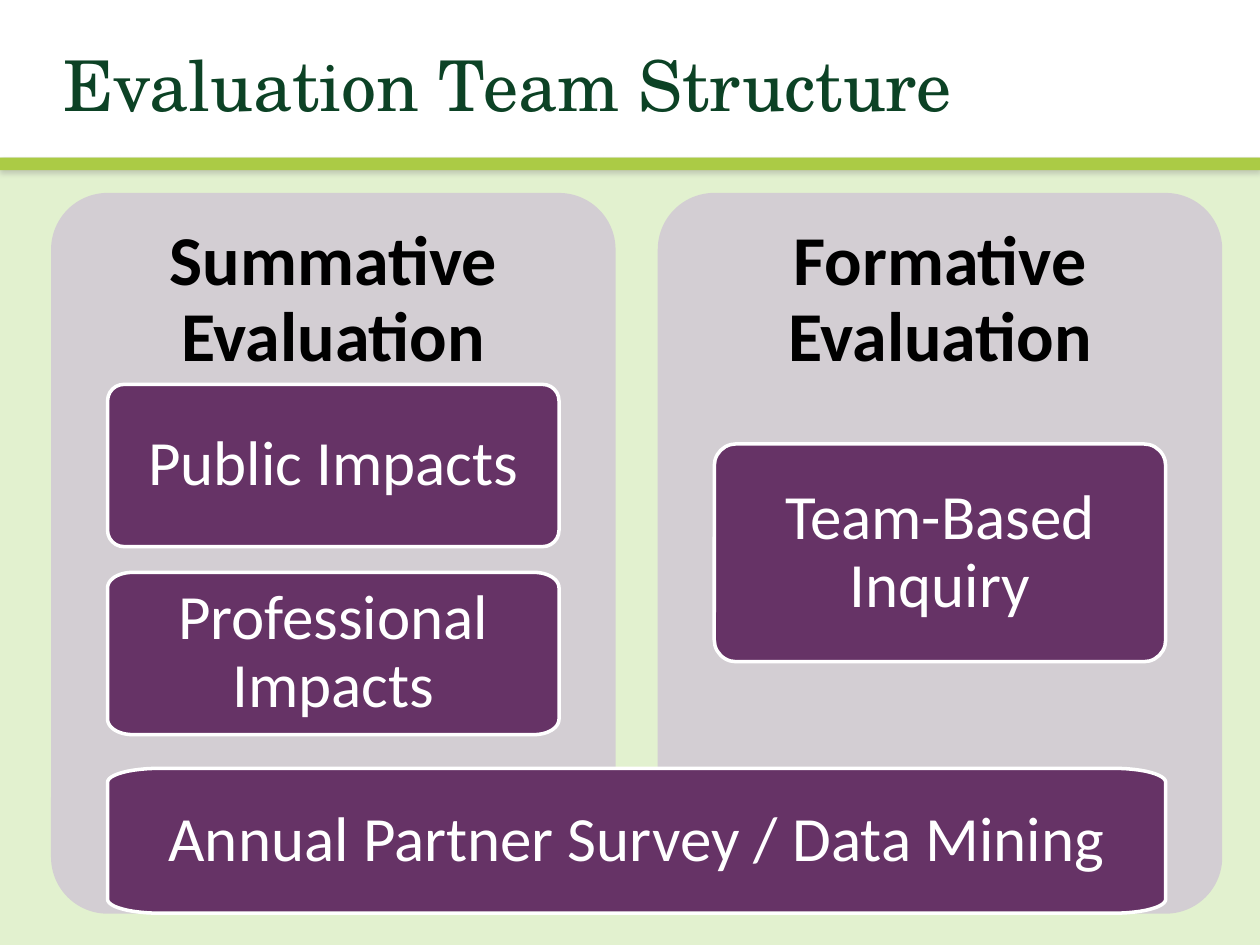
from math import cos, pi, sin

from lxml.etree import SubElement
from pptx import Presentation
from pptx.dml.color import RGBColor
from pptx.enum.shapes import MSO_SHAPE as Shape
from pptx.enum.text import MSO_ANCHOR as Anchor, MSO_AUTO_SIZE as AutoSize, PP_ALIGN as Align
from pptx.oxml.ns import qn
from pptx.util import Cm, Pt

WHITE, BLACK, GREEN, LIME = "FFFFFF", "000000", "0C4225", "ABCB45"
MINT, GREY, PURPLE, SHADE = "E2F1CF", "D3CED3", "663366", "808080"


def color(hex_value):
    return RGBColor.from_string(hex_value)


class SlideStyle:
    heading_font = "TeX Gyre Schola"
    body_font = "Calibri"

    def __init__(self, slide):
        self.shapes = slide.shapes
        slide.background.fill.solid()
        slide.background.fill.fore_color.rgb = color(MINT)

    def paint(self, shape, fill, line=None):
        shape.shadow.inherit = False
        shape.fill.solid()
        shape.fill.fore_color.rgb = color(fill)
        if line:
            shape.line.color.rgb = color(line)
            shape.line.width = Pt(2)
        else:
            shape.line.fill.background()

    def set_text(self, shape, text, insets, align=Align.CENTER, after=0, ink=BLACK, **font):
        frame = shape.text_frame
        frame.text = text
        frame.word_wrap = True
        frame.auto_size = AutoSize.NONE
        frame.vertical_anchor = Anchor.MIDDLE
        for side, inset in zip(("left", "top", "right", "bottom"), insets):
            setattr(frame, f"margin_{side}", Cm(inset))
        paragraph = frame.paragraphs[0]
        layout = {"alignment": align, "line_spacing": 0.9, "space_after": Pt(after)}
        for name, value in layout.items():
            setattr(paragraph, name, value)
        run_font = paragraph.runs[0].font
        run_font.color.rgb = color(ink)
        for name, value in font.items():
            setattr(run_font, name, value)

    def title(self, text, left, top, width, height):
        title = self.shapes.title
        place = {"left": left, "top": top, "width": width, "height": height}
        for name, value in place.items():
            setattr(title, name, Cm(value))
        self.set_text(title, text, (0.25, 0.13, 0.25, 0.13), Align.LEFT,
                      ink=GREEN, name=self.heading_font, size=Pt(40))
        # The title goes in front of the header bands
        title.element.getparent().append(title.element)

    def band(self, top, height, fill):
        band = self.shapes.add_shape(Shape.RECTANGLE, 0, Cm(top), Cm(25.4), Cm(height))
        self.paint(band, fill)
        # Soft shadow straight below the band
        effects = band.element.spPr.find(qn("a:effectLst"))
        shadow = SubElement(effects, qn("a:outerShdw"), blurRad=str(Pt(3.1)),
                            dist=str(Pt(1.8)), dir="5400000", rotWithShape="0")
        tint = SubElement(shadow, qn("a:srgbClr"), val=SHADE)
        SubElement(tint, qn("a:alpha"), val="35000")

    def round_box(self, left, top, width, height, radius):
        box = self.shapes.add_shape(Shape.ROUNDED_RECTANGLE,
                                    Cm(left), Cm(top), Cm(width), Cm(height))
        box.adjustments[0] = radius / min(width, height)
        return box

    def oval_box(self, left, top, width, height, rx, ry, steps=12):
        """Box whose corners are quarter ellipses."""
        right, bottom = left + width, top + height
        centres = [(right - rx, bottom - ry), (left + rx, bottom - ry),
                   (left + rx, top + ry), (right - rx, top + ry)]
        points = []
        for quarter, (cx, cy) in enumerate(centres):
            for step in range(steps + 1):
                angle = (quarter + step / steps) * pi / 2
                points.append((Cm(cx + rx * cos(angle)), Cm(cy + ry * sin(angle))))
        outline = self.shapes.build_freeform(*points[0])
        outline.add_line_segments(points[1:], close=True)
        return outline.convert_to_shape()

    def panel(self, text, left, top, width, height, radius=1.14):
        panel = self.round_box(left, top, width, height, radius)
        self.paint(panel, GREY)
        inner = 0.29 * radius  # a rounded rectangle already insets its text
        side = 0.46 - inner
        self.set_text(panel, text, (side, side, side, 10.64 - inner), after=14,
                      ink=BLACK, name=self.body_font, size=Pt(40), bold=True)

    def topic(self, text, left, top, width, height, rx, ry):
        if rx == ry:
            box = self.round_box(left, top, width, height, rx)
        else:
            box = self.oval_box(left, top, width, height, rx, ry)
        self.paint(box, PURPLE, WHITE)
        self.set_text(box, text, (0.4, 0.33, 0.4, 0.33), after=12.6,
                      ink=WHITE, name=self.body_font, size=Pt(36))


def main():
    deck = Presentation()
    deck.slide_width, deck.slide_height = Cm(25.4), Cm(19.05)
    page = SlideStyle(deck.slides.add_slide(deck.slide_layouts[5]))

    # Header
    page.band(0, 3.18, WHITE)
    page.band(3.18, 0.25, LIME)
    page.title("Evaluation Team Structure", 1.02, 0.76, 23.04, 2.06)

    # Two evaluation columns
    first, pitch, panel_width, indent = 1.03, 12.23, 11.38, 1.14
    topic_width = panel_width - 2 * indent
    columns = [
        ("Summative Evaluation", [("Professional Impacts", 11.54, 3.27, 0.5, 0.31),
                                  ("Public Impacts", 7.75, 3.27, 0.33, 0.33)]),
        ("Formative Evaluation", [("Team-Based Inquiry", 8.95, 4.39, 0.44, 0.44)]),
    ]
    for index, (heading, topics) in enumerate(columns):
        left = first + index * pitch
        page.panel(heading, left, 3.89, panel_width, 14.53)
        for label, top, height, rx, ry in topics:
            page.topic(label, left + indent, top, topic_width, height, rx, ry)

    # Shared base across both columns
    page.topic("Annual Partner Survey / Data Mining", first + indent, 15.49,
               pitch + topic_width, 2.92, 1.04, 0.28)

    deck.save("out.pptx")


if __name__ == "__main__":
    main()
